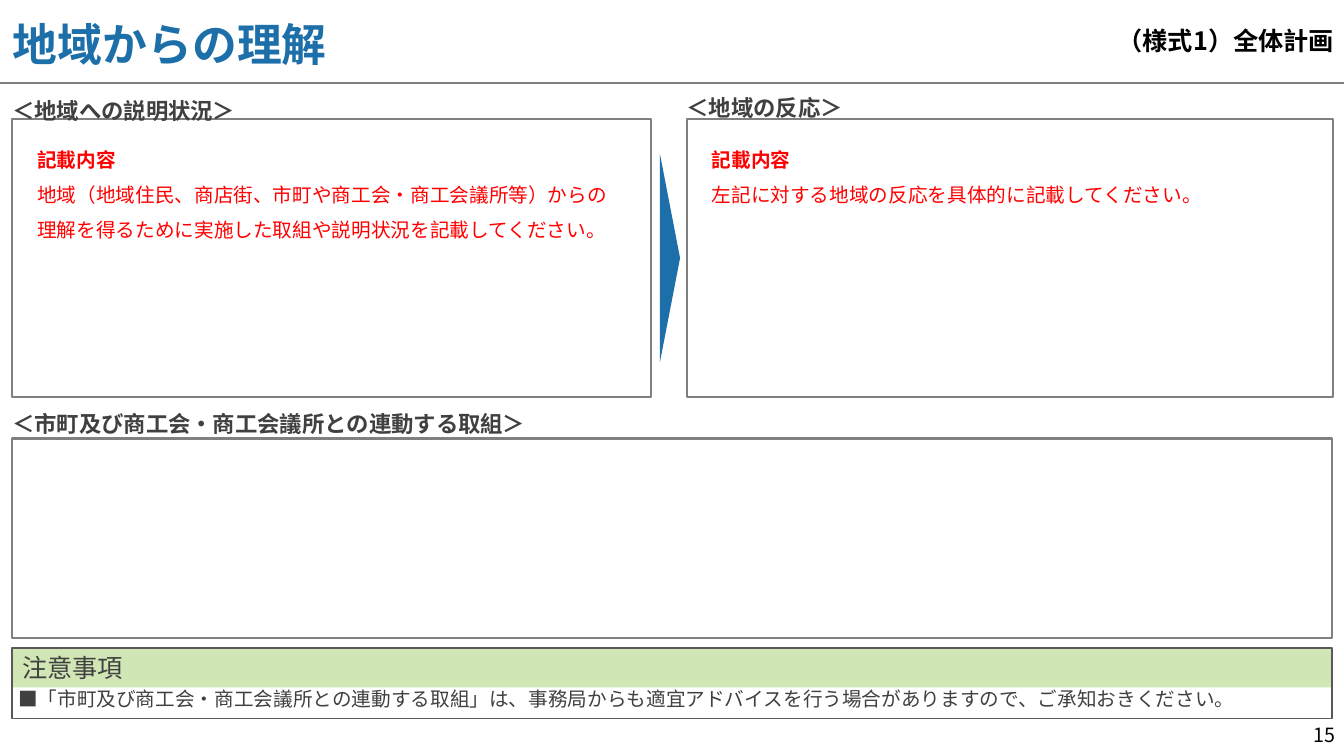
from dataclasses import dataclass

from lxml import etree
from pptx import Presentation
from pptx.dml.color import RGBColor
from pptx.enum import shapes as s, text as t
from pptx.oxml import ns
from pptx.util import Inches, Pt

FONT = "Noto Sans CJK JP"
BLUE = RGBColor(0x1D, 0x6F, 0xA9)
GREEN = RGBColor(0xD1, 0xE6, 0xB5)
RED = RGBColor(0xFF, 0x00, 0x00)
BLACK = RGBColor(0x00, 0x00, 0x00)
INK = RGBColor(0x40, 0x40, 0x40)
GRAY = RGBColor(0x80, 0x80, 0x80)
DARK_GRAY = RGBColor(0x59, 0x59, 0x59)

NO_INSETS = (0, 0, 0, 0)
DEFAULT_INSETS = (0.1, 0.05, 0.1, 0.05)
LEFT_EDGE = 0.12
FULL_WIDTH = 13.09


@dataclass(frozen=True)
class Box:
    left: float
    top: float
    width: float
    height: float

    def lengths(self):
        return [Inches(v) for v in (self.left, self.top, self.width, self.height)]


@dataclass(frozen=True)
class Style:
    size: int
    color: RGBColor
    bold: bool = False
    align: t.PP_ALIGN = t.PP_ALIGN.LEFT
    anchor: t.MSO_ANCHOR = t.MSO_ANCHOR.TOP
    insets: tuple = DEFAULT_INSETS
    spacing: float | None = None


@dataclass(frozen=True)
class Section:
    heading: str
    heading_box: Box
    frame: Box
    guidance: str = ""


HEADING = Style(16, INK, True, insets=NO_INSETS, spacing=1.5)
GUIDANCE = Style(14, RED, insets=NO_INSETS, spacing=1.5)
TITLE = Style(32, BLUE, True, anchor=t.MSO_ANCHOR.MIDDLE)
FORM_LABEL = Style(18, BLACK, True, t.PP_ALIGN.RIGHT, t.MSO_ANCHOR.MIDDLE,
                   (0.1, 0.04, 0.1, 0.04))
PAGE_NUMBER = Style(14, BLACK, align=t.PP_ALIGN.RIGHT)
NOTICE_TITLE = Style(18, INK, anchor=t.MSO_ANCHOR.MIDDLE)
NOTICE = Style(14, INK, insets=(0, 0.01, 0, 0), spacing=Pt(8))

SECTIONS = [
    Section("＜地域への説明状況＞", Box(LEFT_EDGE, 0.83, 6.39, 0.41),
            Box(LEFT_EDGE, 1.18, 6.34, 2.76),
            "地域（地域住民、商店街、市町や商工会・商工会議所等）からの"
            "理解を得るために実施した取組や説明状況を記載してください。"),
    Section("＜地域の反応＞", Box(6.81, 0.8, 4.57, 0.41),
            Box(6.81, 1.18, 6.41, 2.76),
            "左記に対する地域の反応を具体的に記載してください。"),
    Section("＜市町及び商工会・商工会議所との連動する取組＞",
            Box(LEFT_EDGE, 3.94, 6.41, 0.41),
            Box(LEFT_EDGE, 4.35, FULL_WIDTH, 1.98)),
]


def write(shape, lines: list[str], style: Style) -> None:
    frame = shape.text_frame
    frame.word_wrap = True
    frame.vertical_anchor = style.anchor
    (frame.margin_left, frame.margin_top,
     frame.margin_right, frame.margin_bottom) = map(Inches, style.insets)
    frame.text = "\n".join(lines)
    for paragraph in frame.paragraphs:
        paragraph.alignment = style.align
        if style.spacing is not None:
            paragraph.line_spacing = style.spacing
        for run in paragraph.runs:
            run.font.size = Pt(style.size)
            run.font.bold = style.bold
            run.font.color.rgb = style.color
            run.font.name = FONT
            latin = run.font._element.find(ns.qn("a:latin"))
            latin.addnext(latin.makeelement(ns.qn("a:ea"), {"typeface": FONT}))


def add_text(slide, box: Box, lines: list[str], style: Style):
    shape = slide.shapes.add_textbox(*box.lengths())
    write(shape, lines, style)
    return shape


def add_shape(slide, kind: s.MSO_SHAPE, box: Box, fill: RGBColor | None = None,
              line: RGBColor | None = None, weight: float = 1.5):
    shape = slide.shapes.add_shape(kind, *box.lengths())
    shape.shadow.inherit = False
    if fill is None:
        shape.fill.background()
    else:
        shape.fill.solid()
        shape.fill.fore_color.rgb = fill
    if line is None:
        shape.line.fill.background()
    else:
        shape.line.color.rgb = line
        shape.line.width = Pt(weight)
    return shape


def add_header(slide) -> None:
    rule = slide.shapes.add_connector(s.MSO_CONNECTOR.STRAIGHT, Inches(0), Inches(0.82),
                                      Inches(13.33), Inches(0.82))
    rule.line.color.rgb = GRAY
    rule.line.width = Pt(1.5)
    etree.SubElement(rule._element.spPr, ns.qn("a:effectLst"))
    add_text(slide, Box(0.03, 0.03, 10.59, 0.8), ["地域からの理解"], TITLE)
    add_text(slide, Box(10.23, 0, 3.1, 0.8), ["（様式1）全体計画"], FORM_LABEL)


def add_section(slide, section: Section) -> None:
    add_shape(slide, s.MSO_SHAPE.RECTANGLE, section.frame, line=GRAY)
    add_text(slide, section.heading_box, [section.heading], HEADING)
    if section.guidance:
        box = Box(section.frame.left + 0.25, 1.35, 5.78, 1.57)
        guidance = add_text(slide, box, ["記載内容", section.guidance], GUIDANCE)
        guidance.text_frame.paragraphs[0].runs[0].font.bold = True


def add_notice(slide) -> None:
    text = add_text(slide, Box(0.18, 6.93, 12.99, 0.13),
                    ["■「市町及び商工会・商工会議所との連動する取組」は、事務局からも"
                     "適宜アドバイスを行う場合がありますので、ご承知おきください。"], NOTICE)
    text.text_frame.auto_size = t.MSO_AUTO_SIZE.SHAPE_TO_FIT_TEXT
    text.text_frame.paragraphs[0].space_after = Pt(12)
    band = add_shape(slide, s.MSO_SHAPE.RECTANGLE,
                     Box(LEFT_EDGE, 6.43, FULL_WIDTH, 0.39), fill=GREEN)
    write(band, ["注意事項"], NOTICE_TITLE)
    add_shape(slide, s.MSO_SHAPE.RECTANGLE, Box(LEFT_EDGE, 6.43, FULL_WIDTH, 0.7),
              line=DARK_GRAY, weight=1)


def main() -> None:
    deck = Presentation()
    deck.slide_width, deck.slide_height = Inches(13.33), Inches(7.5)
    slide = deck.slides.add_slide(deck.slide_layouts[6])
    add_header(slide)
    add_text(slide, Box(12.67, 7.12, 0.67, 0.38), ["15"], PAGE_NUMBER)
    add_notice(slide)
    for section in SECTIONS:
        add_section(slide, section)
    arrow = add_shape(slide, s.MSO_SHAPE.FLOWCHART_EXTRACT,
                      Box(5.61, 2.46, 2.07, 0.2), fill=BLUE)
    arrow.rotation = 90
    deck.save("out.pptx")


if __name__ == "__main__":
    main()
